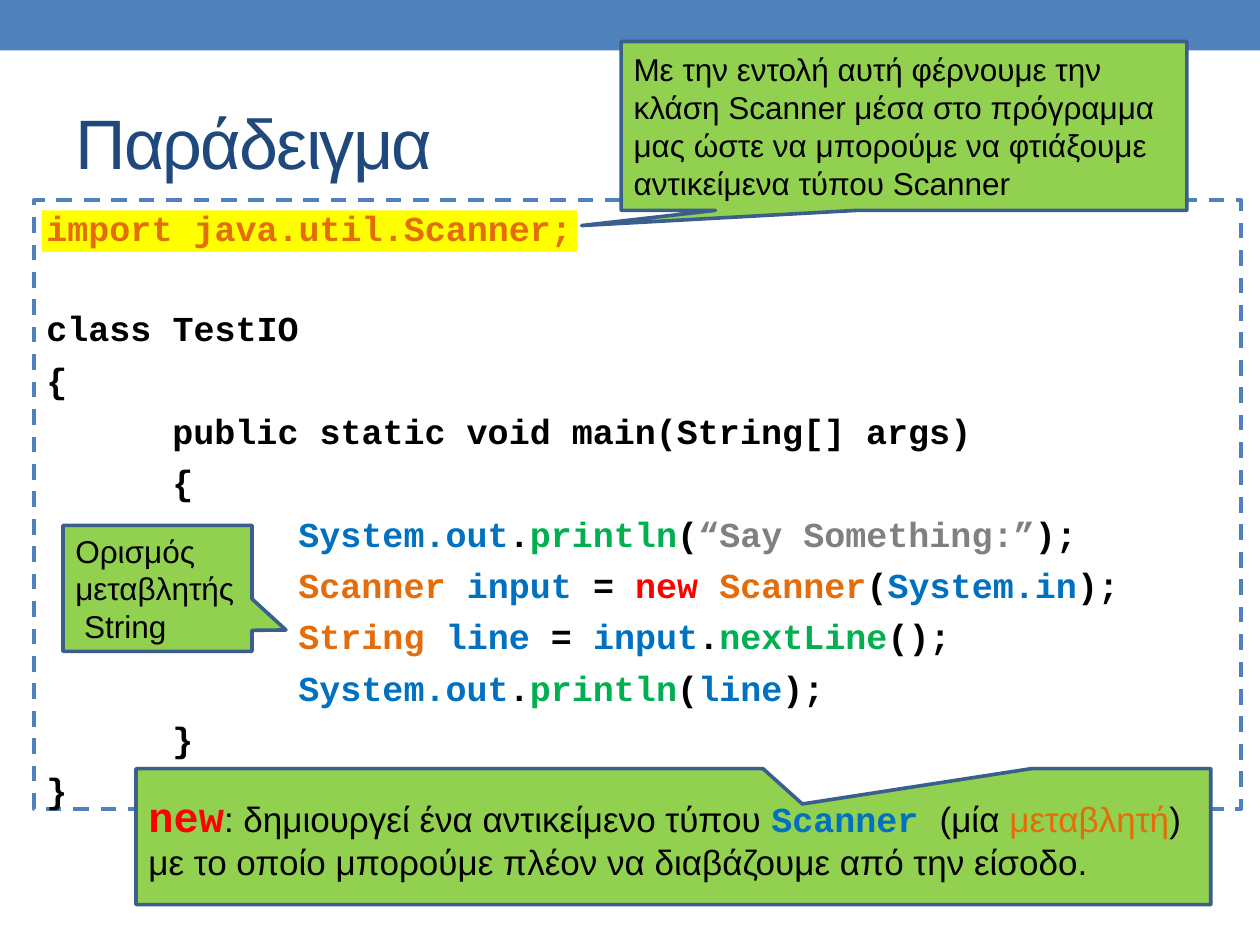
from pptx import Presentation
from pptx.dml.color import RGBColor
from pptx.enum.dml import MSO_LINE
from pptx.enum.shapes import MSO_SHAPE
from pptx.enum.text import MSO_ANCHOR, PP_ALIGN
from pptx.util import Inches, Pt

RECT = MSO_SHAPE.RECTANGLE
CALLOUT = MSO_SHAPE.RECTANGULAR_CALLOUT
DASH = MSO_LINE.DASH
TOP, MIDDLE = MSO_ANCHOR.TOP, MSO_ANCHOR.MIDDLE
LEFT = PP_ALIGN.LEFT

BLUE, NAVY, EDGE = "4F81BD", "1F497D", "3A5F8C"
GREEN, YELLOW = "92D050", "FFFF00"
BLACK, ORANGE, SKY, LEAF, RED, GRAY = "000000", "E46C0A", "0070C0", "00B050", "FF0000", "808080"
SANS, MONO = "Arial", "Courier New"
CODE_GAP, BLANK_LINE = 5.34, 28

PRINTLN = [("System.out", SKY), (".", BLACK), ("println", LEAF), ("(", BLACK)]
END = (");", BLACK)
CODE = [
    (0, 0, [("import java.util.Scanner;", ORANGE)]),
    (0, BLANK_LINE, [("class TestIO", BLACK)]),
    (0, 0, [("{", BLACK)]),
    (1, 0, [("public static void main(String[] args)", BLACK)]),
    (1, 0, [("{", BLACK)]),
    (2, 0, PRINTLN + [("“Say Something:”", GRAY), END]),
    (2, 0, [("Scanner ", ORANGE), ("input", SKY), (" = ", BLACK), ("new ", RED),
            ("Scanner", ORANGE), ("(", BLACK), ("System.in", SKY), END]),
    (2, 0, [("String ", ORANGE), ("line", SKY), (" = ", BLACK), ("input", SKY),
            (".", BLACK), ("nextLine", LEAF), ("();", BLACK)]),
    (2, 0, PRINTLN + [("line", SKY), END]),
    (1, 0, [("}", BLACK)]),
    (0, 0, [("}", BLACK)]),
]


def rgb(value):
    return RGBColor.from_string(value)


class Deck:
    """Holds the current slide and draws its elements in one style."""

    def __init__(self, prs):
        self.s = prs.slides.add_slide(prs.slide_layouts[6])

    def shape(self, kind, box, fill=None, line=None, width=2.08):
        sp = self.s.shapes.add_shape(kind, *map(Inches, box))
        sp.shadow.inherit = False
        if fill:
            sp.fill.solid()
            sp.fill.fore_color.rgb = rgb(fill)
        else:
            sp.fill.background()
        if line:
            sp.line.color.rgb = rgb(line)
            sp.line.width = Pt(width)
        else:
            sp.line.fill.background()
        return sp

    def frame(self, sp, anchor):
        tf = sp.text_frame
        tf.word_wrap = True
        tf.vertical_anchor = anchor
        tf.paragraphs[0].alignment = LEFT
        return tf

    def run(self, p, text, color=BLACK, size=20, font=SANS, bold=False):
        r = p.add_run()
        r.text = text
        r.font.size, r.font.name, r.font.bold = Pt(size), font, bold
        r.font.color.rgb = rgb(color)
        return r

    def title(self, box, text):
        tf = self.frame(self.s.shapes.add_textbox(*map(Inches, box)), MIDDLE)
        r = self.run(tf.paragraphs[0], text, NAVY, 40)
        r.font._element.set("spc", "-100")

    def code(self, box, lines):
        sp = self.shape(RECT, box, line=BLUE, width=2.25)
        sp.line.dash_style = DASH
        tf = self.frame(sp, TOP)
        for i, (level, extra, runs) in enumerate(lines):
            p = tf.add_paragraph() if i else tf.paragraphs[0]
            p.alignment = LEFT
            p.space_before = Pt(CODE_GAP + extra)
            p._p.get_or_add_pPr().set("marL", str(Inches(level)))
            for text, color in runs:
                self.run(p, text, color, font=MONO, bold=True)

    def callout(self, box, tip, runs):
        sp = self.shape(CALLOUT, box, GREEN, EDGE)
        sp.adjustments[0], sp.adjustments[1] = tip
        p = self.frame(sp, MIDDLE).paragraphs[0]
        for text, style in runs:
            self.run(p, text, **style)


def main():
    prs = Presentation()
    prs.slide_width, prs.slide_height = Inches(10), Inches(7.5)
    deck = Deck(prs)
    deck.shape(RECT, (0, 0, 10, 0.4), BLUE)
    deck.shape(RECT, (0.33, 1.67, 4.25, 0.33), YELLOW)
    deck.title((0.5, 0.58, 9, 1.08), "Παράδειγμα")
    deck.code((0.27, 1.59, 9.58, 4.83), CODE)
    deck.callout((1.08, 6.1, 8.53, 1.08), (0.12, -0.24), [
        ("new", dict(color=RED, size=24, font=MONO, bold=True)),
        (": δημιουργεί ένα αντικείμενο τύπου ", {}),
        ("Scanner ", dict(color=SKY, font=MONO, bold=True)),
        ("(μία ", {}),
        ("μεταβλητή", dict(color=ORANGE)),
        (") με το οποίο μπορούμε πλέον να διαβάζουμε από την είσοδο.", {}),
    ])
    deck.callout((4.93, 0.33, 4.49, 1.34), (-0.57, 0.59), [
        ("Με την εντολή αυτή φέρνουμε την κλάση Scanner μέσα στο πρόγραμμα μας "
         "ώστε να μπορούμε να φτιάξουμε αντικείμενα τύπου Scanner", dict(size=18)),
    ])
    deck.callout((0.5, 4.17, 1.5, 1), (0.68, 0.33), [
        ("Ορισμός μεταβλητής  String", dict(size=18)),
    ])
    prs.save("out.pptx")


if __name__ == "__main__":
    main()
